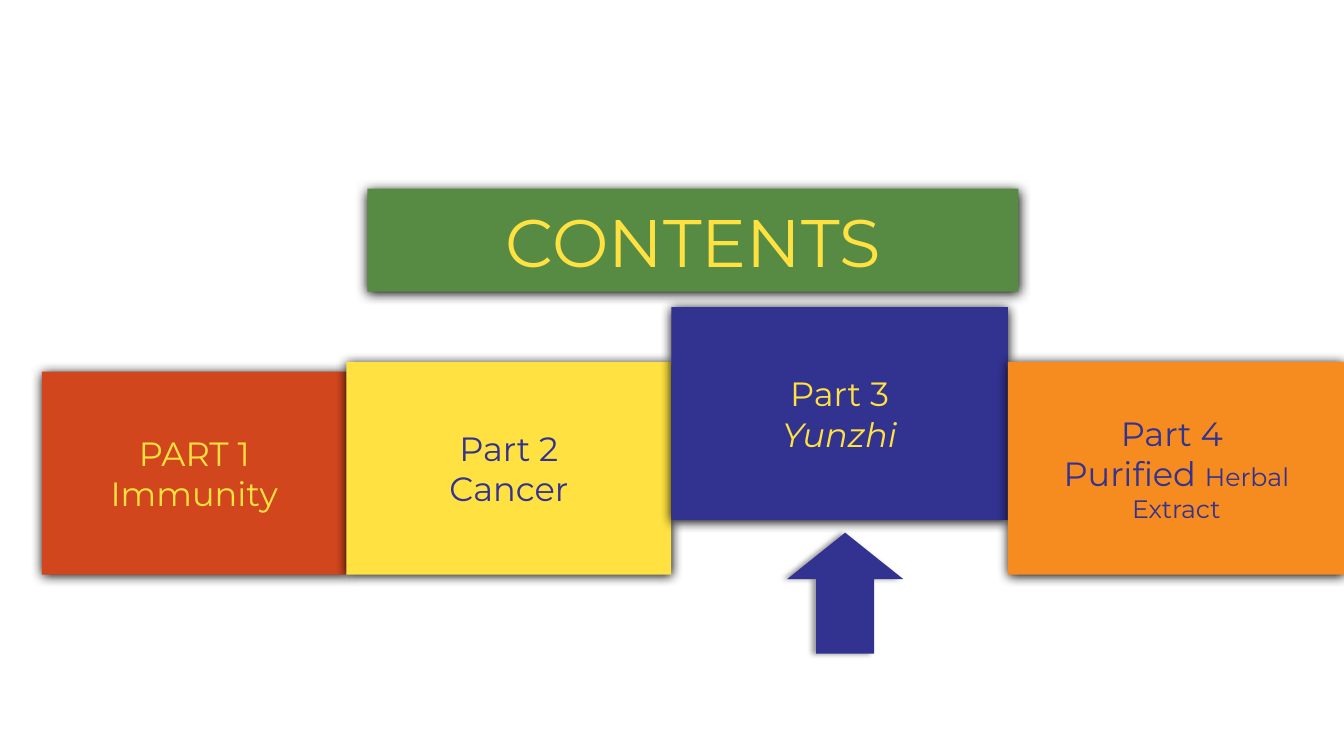
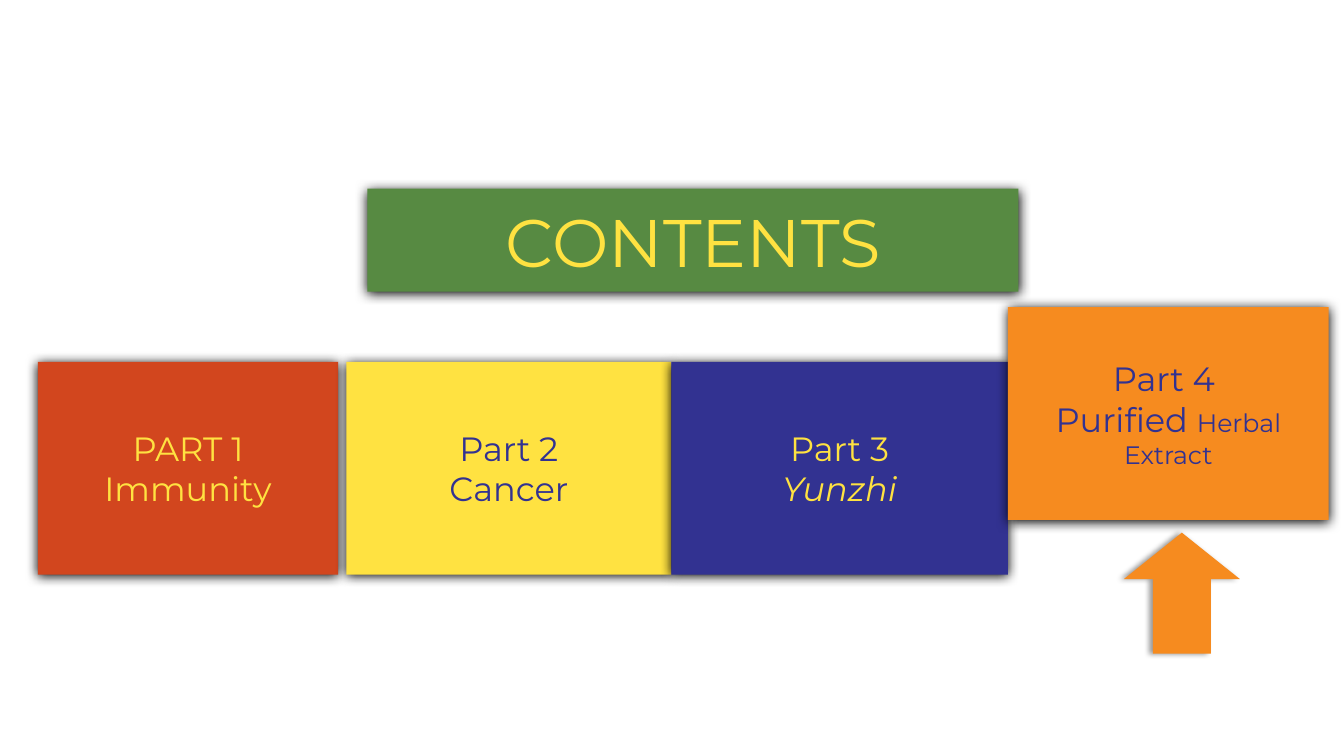
from lxml import etree
from pptx import Presentation
from pptx.dml.color import RGBColor
from pptx.enum import shapes, text
from pptx.oxml.ns import qn
from pptx.util import Pt

FONT = "Montserrat"
RED, YELLOW, BLUE, ORANGE, GREEN = "D2461E", "FFE241", "323291", "F68B1F", "578A42"
BOX_SHADOW = dict(alpha=100, blur=8.5, dist=1, angle=90)
ARROW_SHADOW = dict(alpha=40, blur=4, dist=3, angle=180)

TITLE_BOX = (262.5, 134.8, 465, 73.5)
CARD_TOP, RAISED_TOP, CARD_HEIGHT = 258.5, 219.5, 152
ARROW_LEFT, ARROW_GAP, ARROW_SIZE = 82.8, 9, (82.8, 86.4)

PARTS = [
    (RED, YELLOW, [[("PART 1", {})], [("Immunity", {})]]),
    (YELLOW, BLUE, [[("Part 2", {})], [("Cancer", {})]]),
    (BLUE, YELLOW, [[("Part 3", {})], [("Yunzhi", {"italic": True})]]),
    (ORANGE, BLUE, [[("Part 4 ", {})],
                    [("Purified ", {}), ("Herbal Extract", {"size": Pt(18)})]]),
]


def rgb(value):
    """Return the colour for a hex string."""
    return RGBColor.from_string(value)


def add_shadow(sp, alpha, blur, dist, angle):
    """Give a shape a black outer shadow."""
    sp.shadow.inherit = False
    effects = sp._element.spPr.find(qn("a:effectLst"))
    outer = etree.SubElement(
        effects, qn("a:outerShdw"), blurRad=str(Pt(blur)), dist=str(Pt(dist)),
        dir=str(angle * 60000), algn="ctr", rotWithShape="0")
    colour = etree.SubElement(outer, qn("a:srgbClr"), val="000000")
    etree.SubElement(colour, qn("a:alpha"), val=str(alpha * 1000))


def add_block(s, kind, box, fill, shadow):
    """Add a filled, unlined preset shape with a shadow."""
    sp = s.shapes.add_shape(kind, *map(Pt, box))
    sp.fill.solid()
    sp.fill.fore_color.rgb = rgb(fill)
    sp.line.fill.background()
    add_shadow(sp, **shadow)
    return sp


def add_label(s, box, fill, colour, size, lines):
    """Add a rectangle with centred lines of runs."""
    sp = add_block(s, shapes.MSO_SHAPE.RECTANGLE, box, fill, BOX_SHADOW)
    tf = sp.text_frame
    tf.word_wrap = True
    tf.vertical_anchor = text.MSO_ANCHOR.MIDDLE
    for i, runs in enumerate(lines):
        p = tf.add_paragraph() if i else tf.paragraphs[0]
        p.alignment = text.PP_ALIGN.CENTER
        p.font.name, p.font.size = FONT, Pt(size)
        p.font.color.rgb = rgb(colour)
        for content, style in runs:
            r = p.add_run()
            r.text = content
            for name, value in style.items():
                setattr(r.font, name, value)


def add_arrow(s, card, fill):
    """Add an arrow pointing up at a card."""
    left, top, _, height = card
    box = (left + ARROW_LEFT, top + height + ARROW_GAP, *ARROW_SIZE)
    sp = add_block(s, shapes.MSO_SHAPE.UP_ARROW, box, fill, ARROW_SHADOW)
    sp.adjustments[0], sp.adjustments[1] = 0.5, 0.4


def add_contents_slide(prs, current, spans, first_inset=0):
    """Add a contents slide with the current part raised and marked."""
    s = prs.slides.add_slide(prs.slide_layouts[6])
    for i, ((fill, colour, lines), (left, width)) in enumerate(zip(PARTS, spans)):
        top = RAISED_TOP if i == current else CARD_TOP
        inset = 0 if i else first_inset
        card = (left, top + inset, width, CARD_HEIGHT - inset)
        add_label(s, card, fill, colour, 24, lines)
        if i == current:
            add_arrow(s, card, fill)
    add_label(s, TITLE_BOX, GREEN, YELLOW, 48, [[("CONTENTS", {})]])


def main():
    """Build and save the presentation."""
    prs = Presentation()
    prs.slide_width, prs.slide_height = Pt(960), Pt(540)
    middle = [(247.5, 232), (479.5, 240.5)]
    add_contents_slide(prs, 2, [(30, 217.5), *middle, (720, 240.5)], first_inset=7)
    add_contents_slide(prs, 3, [(27, 214.5), *middle, (720, 229)])
    prs.save("out.pptx")


if __name__ == "__main__":
    main()
